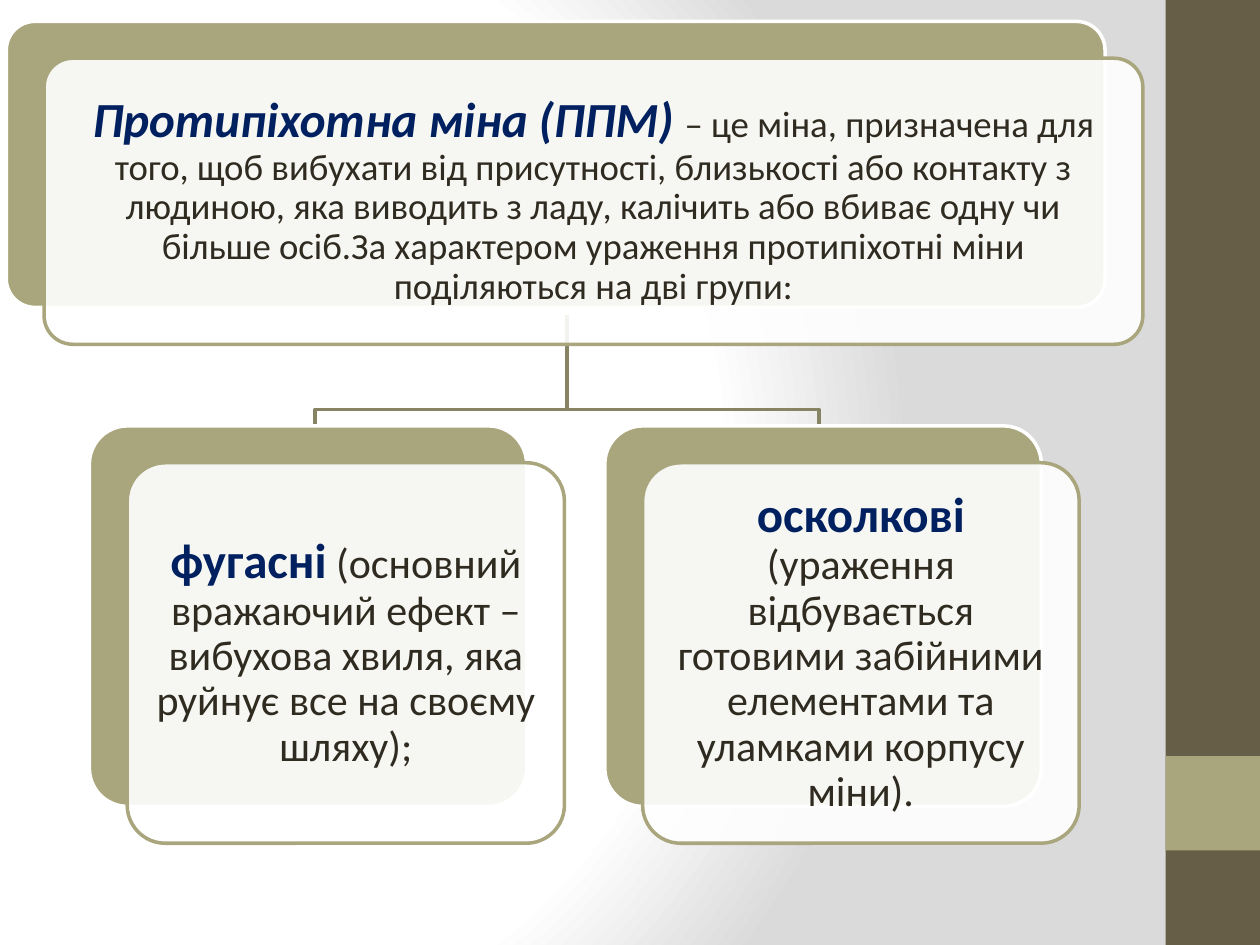
from lxml import etree
from pptx import Presentation
from pptx import util as u
from pptx.dml.color import RGBColor
from pptx.enum import shapes, text
from pptx.oxml import parse_xml
from pptx.oxml.ns import nsdecls, qn

THEME = {
    "font": "Calibri",
    "dark": "675E47", "olive": "A9A57C", "branch": "878463",
    "white": "FFFFFF", "grey": "DADADA", "navy": "002060", "ink": "2F2B20",
    "term": 28, "definition": 21, "group": 24,
    "line": 2, "corner": 0.1, "opacity": 90,
}

# The slide is a grid of 40 columns by 30 rows of square cells
COLUMNS, ROWS = 40, 30
CELL = u.Inches(0.25)

deck = Presentation()
deck.slide_width, deck.slide_height = COLUMNS * CELL, ROWS * CELL
page = deck.slides.add_slide(deck.slide_layouts[6])


def add_block(left, top, width, height, fill, kind=shapes.MSO_SHAPE.RECTANGLE,
              line=None, opacity=100):
    """Draw a filled shape placed in grid cells."""
    area = [round(CELL * cells) for cells in (left, top, width, height)]
    block = page.shapes.add_shape(kind, *area)
    block.shadow.inherit = False
    block.fill.solid()
    block.fill.fore_color.rgb = RGBColor.from_string(fill)
    if opacity < 100:
        color = block.element.spPr.find(qn("a:solidFill")).find(qn("a:srgbClr"))
        etree.SubElement(color, qn("a:alpha"), val=str(opacity * 1000))
    if line:
        block.line.color.rgb = RGBColor.from_string(line)
        block.line.width = u.Pt(THEME["line"])
        block.adjustments[0] = THEME["corner"]
    else:
        block.line.fill.background()


def add_span(para, words, size, color, bold=False, italic=False):
    """Add formatted words to a paragraph."""
    span = para.add_run()
    span.text = words
    span.font.name = THEME["font"]
    span.font.size = u.Pt(size)
    span.font.color.rgb = RGBColor.from_string(color)
    span.font.bold, span.font.italic = bold, italic


# Background: radial fade from white to grey
page.background.fill.solid()
backdrop = page.element.find(".//" + qn("p:bgPr"))
stops = "".join(
    f'<a:gs pos="{share * 1000}"><a:srgbClr val="{color}"/></a:gs>'
    for share, color in ((0, THEME["white"]), (75, THEME["white"]), (100, THEME["grey"])))
fade = parse_xml(
    f'<a:gradFill {nsdecls("a")} rotWithShape="1"><a:gsLst>{stops}</a:gsLst>'
    '<a:path path="circle"><a:fillToRect l="20000" t="50000" r="100000" b="50000"/>'
    '</a:path></a:gradFill>')
backdrop.replace(backdrop.find(qn("a:solidFill")), fade)

# Side band with its accent square
add_block(37, 0, 3, ROWS, THEME["dark"])
add_block(37, 24, 3, 3, THEME["olive"])

# Cards: left, top, width, height, term, explanation, explanation size
cards = [
    (0.2, 0.68, 34.88, 9.08, "Протипіхотна міна (ППМ) ",
     "– це міна, призначена для того, щоб вибухати від присутності, близькості "
     "або контакту з людиною, яка виводить з ладу, калічить або вбиває одну чи "
     "більше осіб.За характером ураження протипіхотні міни поділяються на дві групи:",
     THEME["definition"]),
    (2.84, 13.52, 13.88, 12.08, "фугасні",
     " (основний вражаючий ефект – вибухова хвиля, яка руйнує все на своєму шляху);",
     THEME["group"]),
    (19.2, 13.52, 13.86, 12.08, "осколкові ",
     "(ураження відбувається готовими забійними елементами та уламками корпусу міни).",
     THEME["group"]),
]
root, *groups = cards

# Branches from the definition down to each group
root_x, root_y = root[0] + root[2] / 2, root[1] + root[3]
for left, top, width, *_ in reversed(groups):
    group_x, elbow_y = left + width / 2, top - 1
    builder = page.shapes.build_freeform(root_x, root_y, scale=CELL)
    builder.add_line_segments(
        [(root_x, elbow_y), (group_x, elbow_y), (group_x, top)], close=False)
    branch = builder.convert_to_shape()
    branch.shadow.inherit = False
    branch.fill.background()
    branch.line.color.rgb = RGBColor.from_string(THEME["branch"])
    branch.line.width = u.Pt(THEME["line"])

# Each card is an olive plate, a translucent front plate and its text
SHIFT_X, SHIFT_Y = 1.2, 1.17
ROUNDED = shapes.MSO_SHAPE.ROUNDED_RECTANGLE
for left, top, width, height, term, explanation, size in cards:
    add_block(left, top, width, height, THEME["olive"], kind=ROUNDED,
              line=THEME["white"])
    left, top = left + SHIFT_X, top + SHIFT_Y
    add_block(left, top, width, height, THEME["white"], kind=ROUNDED,
              line=THEME["olive"], opacity=THEME["opacity"])

    # Text keeps clear of the rounded corners
    inset = 0.29 * THEME["corner"] * height
    area = (left + inset, top + inset, width - 2 * inset, height - 2 * inset)
    box = page.shapes.add_textbox(*[round(CELL * cells) for cells in area])
    frame = box.text_frame
    frame.word_wrap = True
    frame.vertical_anchor = text.MSO_ANCHOR.MIDDLE
    frame.margin_left = frame.margin_right = u.Inches(0.12)
    frame.margin_top = frame.margin_bottom = u.Inches(0.12)
    para = frame.paragraphs[0]
    para.alignment = text.PP_ALIGN.CENTER
    para.line_spacing = 0.9
    add_span(para, term, THEME["term"], THEME["navy"], bold=True,
             italic=size == THEME["definition"])
    add_span(para, explanation, size, THEME["ink"])

deck.save("out.pptx")
